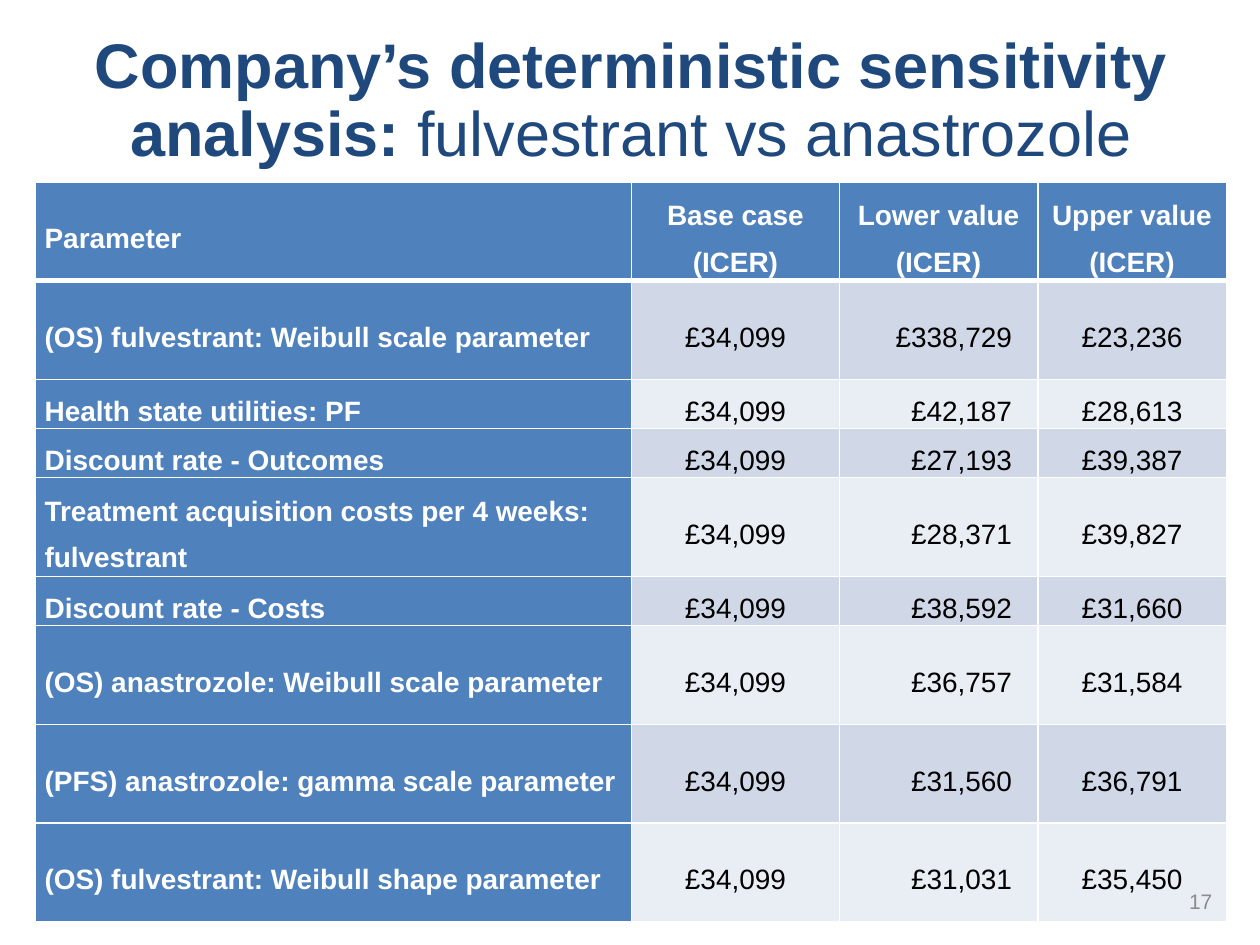
from dataclasses import dataclass

from lxml import etree
from pptx import Presentation
from pptx.dml.color import RGBColor
from pptx.enum.text import MSO_ANCHOR, MSO_AUTO_SIZE, PP_ALIGN
from pptx.oxml.ns import qn
from pptx.util import Cm, Pt

LEFT, CENTER, RIGHT = PP_ALIGN.LEFT, PP_ALIGN.CENTER, PP_ALIGN.RIGHT
MIDDLE = MSO_ANCHOR.MIDDLE
NO_AUTOFIT = MSO_AUTO_SIZE.NONE
TITLE_ONLY = 5


@dataclass(frozen=True)
class Theme:
    font: str = "Arial"
    title: str = "1F497D"
    heading: str = "4F81BD"
    bands: tuple = ("E9EDF4", "D0D8E8")
    light: str = "FFFFFF"
    dark: str = "000000"
    muted: str = "8C8C8C"
    title_size: int = 36
    table_size: int = 16
    number_size: int = 12
    rule: int = 1
    header_rule: int = 3


class SlideBuilder:
    """Adds styled elements to the current slide."""

    def __init__(self, slide, theme):
        self.slide = slide
        self.theme = theme

    def style(self, font, size, color, bold=None):
        font.name = self.theme.font
        font.size = Pt(size)
        font.color.rgb = RGBColor.from_string(color)
        font.bold = bold

    def title(self, strong, plain, box):
        title = self.slide.shapes.title
        title.left, title.top, title.width, title.height = map(Cm, box)
        frame = title.text_frame
        frame.auto_size = NO_AUTOFIT
        frame.vertical_anchor = MIDDLE
        heading = frame.paragraphs[0]
        heading.alignment = CENTER
        heading.line_spacing = 0.9
        self.style(heading.font, self.theme.title_size, self.theme.title)
        for wording, bold in ((strong, True), (plain, False)):
            run = heading.add_run()
            run.text = wording
            run.font.bold = bold

    def borders(self, cell, top, bottom):
        properties = cell._tc.get_or_add_tcPr()
        widths = {"lnL": self.theme.rule, "lnR": self.theme.rule, "lnT": top, "lnB": bottom}
        for side, width in widths.items():
            line = etree.SubElement(properties, qn(f"a:{side}"), w=str(Pt(width)))
            fill = etree.SubElement(line, qn("a:solidFill"))
            etree.SubElement(fill, qn("a:srgbClr"), val=self.theme.light)

    def cell(self, cell, wording, row, column):
        theme = self.theme
        is_heading = row == 0 or column == 0
        is_lower_value = row > 0 and column == 2
        self.borders(
            cell,
            theme.header_rule if row == 1 else theme.rule,
            theme.header_rule if row == 0 else theme.rule,
        )
        cell.fill.solid()
        background = theme.heading if is_heading else theme.bands[row % 2]
        cell.fill.fore_color.rgb = RGBColor.from_string(background)
        cell.vertical_anchor = MIDDLE
        cell.margin_left = Cm(0.18)
        cell.margin_right = Cm(0.52 if is_lower_value else 0.18)
        cell.margin_top = cell.margin_bottom = 0
        cell.text = wording
        for paragraph in cell.text_frame.paragraphs:
            paragraph.alignment = LEFT if column == 0 else RIGHT if is_lower_value else CENTER
            paragraph.line_spacing = 1.5
            color = theme.light if is_heading else theme.dark
            self.style(paragraph.font, theme.table_size, color, is_heading)

    def table(self, records, left, top, widths, heights):
        table = self.slide.shapes.add_table(
            len(records), len(widths), Cm(left), Cm(top), Cm(sum(widths)), Cm(sum(heights))
        ).table
        for column, width in zip(table.columns, widths):
            column.width = Cm(width)
        for row, height in zip(table.rows, heights):
            row.height = Cm(height)
        for row, record in enumerate(records):
            for column, wording in enumerate(record):
                self.cell(table.cell(row, column), wording, row, column)

    def page_number(self, number, box):
        frame = self.slide.shapes.add_textbox(*map(Cm, box)).text_frame
        frame.word_wrap = True
        frame.vertical_anchor = MIDDLE
        paragraph = frame.paragraphs[0]
        paragraph.text = number
        paragraph.alignment = RIGHT
        self.style(paragraph.font, self.theme.number_size, self.theme.muted)


BASE_CASE = "£34,099"
SINGLE, DOUBLE = 0.99, 1.99
HEADER = ("Parameter", "Base case\n(ICER)", "Lower value\n(ICER)", "Upper value\n(ICER)")
SENSITIVITIES = [
    ("(OS) fulvestrant: Weibull scale parameter", "£338,729", "£23,236", DOUBLE),
    ("Health state utilities: PF", "£42,187", "£28,613", SINGLE),
    ("Discount rate - Outcomes", "£27,193", "£39,387", SINGLE),
    ("Treatment acquisition costs per 4 weeks: fulvestrant", "£28,371", "£39,827", DOUBLE),
    ("Discount rate - Costs", "£38,592", "£31,660", SINGLE),
    ("(OS) anastrozole: Weibull scale parameter", "£36,757", "£31,584", DOUBLE),
    ("(PFS) anastrozole: gamma scale parameter", "£31,560", "£36,791", DOUBLE),
    ("(OS) fulvestrant: Weibull shape parameter", "£31,031", "£35,450", DOUBLE),
]


def main():
    presentation = Presentation()
    presentation.slide_width, presentation.slide_height = Cm(25.4), Cm(19.05)
    slide = presentation.slides.add_slide(presentation.slide_layouts[TITLE_ONLY])
    builder = SlideBuilder(slide, Theme())
    builder.title(
        "Company’s deterministic sensitivity analysis:",
        " fulvestrant vs anastrozole",
        (0.72, 0.74, 24, 2.62),
    )
    records = [HEADER] + [
        (parameter, BASE_CASE, lower, upper) for parameter, lower, upper, _ in SENSITIVITIES
    ]
    heights = [DOUBLE] + [height for *_, height in SENSITIVITIES]
    builder.table(records, 0.72, 3.67, (12.01, 4.19, 4, 3.8), heights)
    builder.page_number("17", (18.97, 17.65, 5.72, 1.02))
    presentation.save("out.pptx")


if __name__ == "__main__":
    main()
